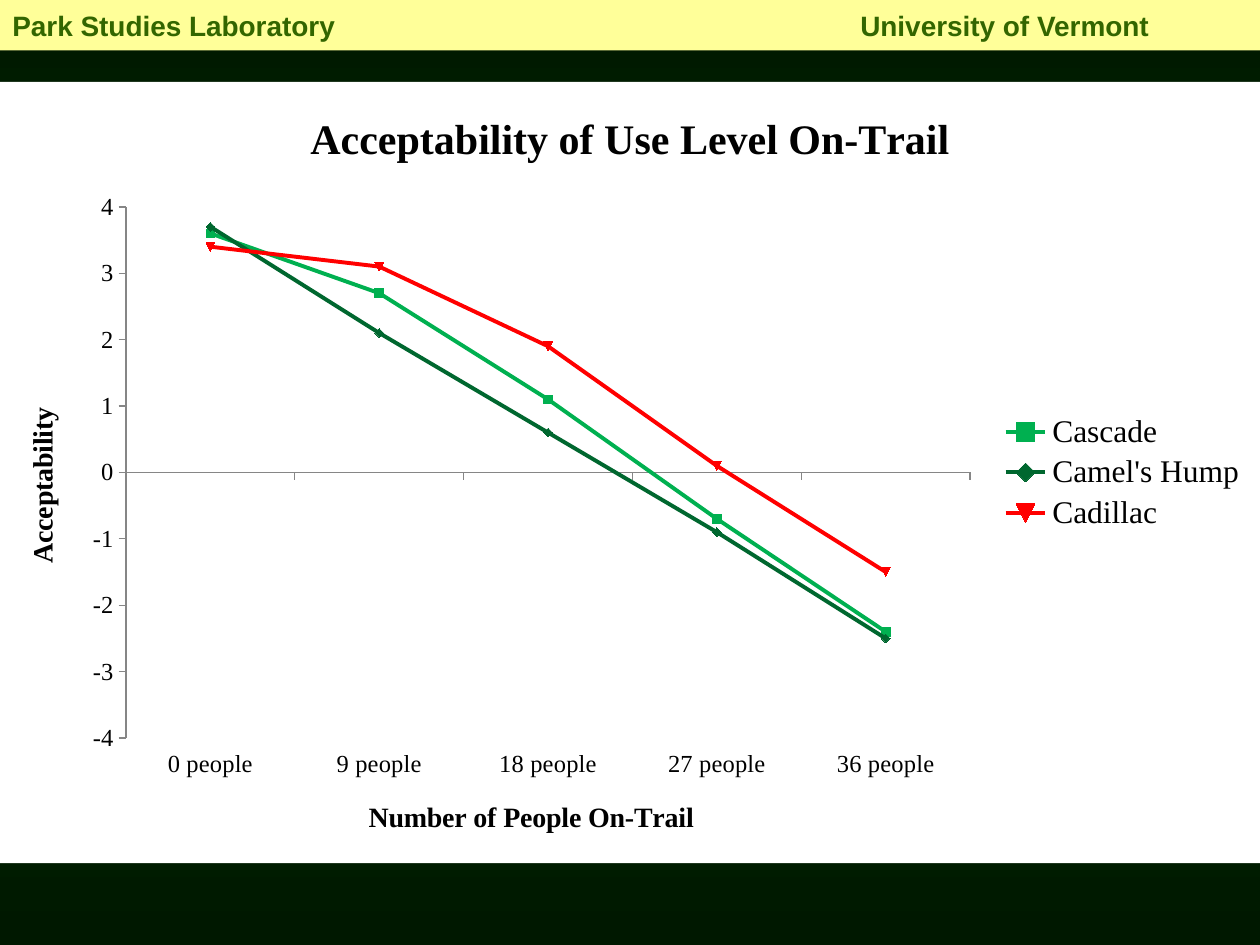
from lxml import etree
from pptx import Presentation
from pptx.chart.data import CategoryChartData
from pptx.dml.color import RGBColor
from pptx.enum.chart import (XL_CHART_TYPE, XL_LEGEND_POSITION, XL_MARKER_STYLE,
                             XL_TICK_LABEL_POSITION, XL_TICK_MARK)
from pptx.enum.shapes import MSO_SHAPE
from pptx.enum.text import MSO_ANCHOR, PP_ALIGN
from pptx.oxml import parse_xml
from pptx.oxml.ns import nsdecls, qn
from pptx.util import Inches, Pt

LINE_MARKERS = XL_CHART_TYPE.LINE_MARKERS
LEGEND_RIGHT = XL_LEGEND_POSITION.RIGHT
AUTOMATIC_MARKER = XL_MARKER_STYLE.AUTOMATIC
LABELS_LOW = XL_TICK_LABEL_POSITION.LOW
TICK_OUTSIDE = XL_TICK_MARK.OUTSIDE
TICK_NONE = XL_TICK_MARK.NONE
RECTANGLE = MSO_SHAPE.RECTANGLE
MIDDLE = MSO_ANCHOR.MIDDLE
LEFT = PP_ALIGN.LEFT

BLACK = RGBColor(0x00, 0x00, 0x00)
WHITE = RGBColor(0xFF, 0xFF, 0xFF)
AXIS_GRAY = RGBColor(0x86, 0x86, 0x86)
BANNER_YELLOW = RGBColor(0xFF, 0xFF, 0x99)
BANNER_GREEN = RGBColor(0x33, 0x66, 0x00)
EDGE_GREEN = RGBColor(0x00, 0x18, 0x00)
CENTER_GREEN = RGBColor(0x00, 0x33, 0x00)

BANNER = ("Park Studies Laboratory", "University of Vermont")
CHART_TITLE = "Acceptability of Use Level On-Trail"
CATEGORY_TITLE = "Number of People On-Trail"
VALUE_TITLE = "Acceptability"
CATEGORIES = [f"{people} people" for people in range(0, 37, 9)]
SERIES = [
    ("Cascade", (3.6, 2.7, 1.1, -0.7, -2.4), RGBColor(0x00, 0xB0, 0x50)),
    ("Camel's Hump", (3.7, 2.1, 0.6, -0.9, -2.5), RGBColor(0x00, 0x67, 0x2F)),
    ("Cadillac", (3.4, 3.1, 1.9, 0.1, -1.5), RGBColor(0xFF, 0x00, 0x00)),
]
PLOT_SHARES = {"x": 0.1, "y": 0.16, "w": 0.67, "h": 0.68}
WIDTH, HEIGHT = Inches(10), Inches(7.5)


def set_background(slide):
    fill = slide.background.fill
    fill.gradient()
    fill.gradient_angle = 90
    for stop in fill.gradient_stops:
        stop.color.rgb = EDGE_GREEN
    first_stop = slide.background._cSld.find(".//" + qn("a:gs"))
    first_stop.addnext(parse_xml(
        f'<a:gs {nsdecls("a")} pos="50000"><a:srgbClr val="{CENTER_GREEN}"/></a:gs>'))


def set_title(owner, text, size):
    frame = owner.text_frame
    frame.text = text
    font = frame.paragraphs[0].font
    font.name, font.size, font.bold = "Times New Roman", Pt(size), True
    font.color.rgb = BLACK


def format_axis(axis, title):
    set_title(axis.axis_title, title, 16)
    axis.has_major_gridlines = False
    axis.major_tick_mark = TICK_OUTSIDE
    axis.minor_tick_mark = TICK_NONE
    axis.tick_labels.font.size = Pt(14)
    axis.format.line.color.rgb = AXIS_GRAY
    axis.format.line.width = Pt(0.75)


def fill_area(parent, before):
    properties = parse_xml(
        f'<c:spPr {nsdecls("c", "a")}><a:solidFill><a:srgbClr val="{WHITE}"/>'
        '</a:solidFill><a:ln><a:noFill/></a:ln></c:spPr>')
    following = parent.find(qn(before)) if before else None
    if following is None:
        parent.append(properties)
    else:
        following.addprevious(properties)


def place_plot(plot_area):
    for layout in plot_area.findall(qn("c:layout")):
        plot_area.remove(layout)
    layout = etree.Element(qn("c:layout"))
    manual = etree.SubElement(layout, qn("c:manualLayout"))
    settings = {"layoutTarget": "inner", "xMode": "edge", "yMode": "edge", **PLOT_SHARES}
    for name, value in settings.items():
        etree.SubElement(manual, qn(f"c:{name}")).set("val", str(value))
    plot_area.insert(0, layout)


def add_acceptability_chart(slide):
    data = CategoryChartData()
    data.categories = CATEGORIES
    for name, values, _ in SERIES:
        data.add_series(name, values)
    chart = slide.shapes.add_chart(
        LINE_MARKERS, 0, Inches(0.65), WIDTH, Inches(6.2), data).chart
    chart.font.name, chart.font.size = "Times New Roman", Pt(10)
    chart.font.color.rgb = BLACK
    set_title(chart.chart_title, CHART_TITLE, 24)
    chart.chart_title.include_in_layout = False

    format_axis(chart.category_axis, CATEGORY_TITLE)
    chart.category_axis.tick_label_position = LABELS_LOW
    format_axis(chart.value_axis, VALUE_TITLE)
    chart.value_axis.minimum_scale, chart.value_axis.maximum_scale = -4, 4
    chart.value_axis.major_unit = 1

    chart.has_legend = True
    chart.legend.position = LEGEND_RIGHT
    chart.legend.include_in_layout = False
    chart.legend.font.size = Pt(18)

    plot = chart.plots[0]
    plot.vary_by_categories = False
    for series, (_, _, color) in zip(plot.series, SERIES):
        series.smooth = False
        series.format.line.color.rgb = color
        series.format.line.width = Pt(2.25)
        marker = series.marker
        marker.style, marker.size = AUTOMATIC_MARKER, 5
        marker.format.fill.solid()
        marker.format.fill.fore_color.rgb = color
        marker.format.line.color.rgb = color

    chart_space = chart._chartSpace
    plot_area = chart_space.find(".//" + qn("c:plotArea"))
    place_plot(plot_area)
    fill_area(plot_area, None)
    fill_area(chart_space, "c:txPr")


def add_banner(slide):
    banner = slide.shapes.add_shape(RECTANGLE, 0, 0, WIDTH, Inches(0.4))
    banner.shadow.inherit = False
    banner.fill.solid()
    banner.fill.fore_color.rgb = BANNER_YELLOW
    banner.line.fill.background()
    frame = banner.text_frame
    frame.vertical_anchor = MIDDLE
    paragraph = frame.paragraphs[0]
    paragraph.text = "\t".join(BANNER)
    paragraph.alignment = LEFT
    font = paragraph.font
    font.name, font.size, font.bold = "Arial", Pt(16), True
    font.color.rgb = BANNER_GREEN
    tabs = parse_xml(f'<a:tabLst {nsdecls("a")}><a:tab pos="{Inches(6.73)}" algn="l"/></a:tabLst>')
    paragraph._p.pPr.find(qn("a:defRPr")).addprevious(tabs)


def main():
    presentation = Presentation()
    presentation.slide_width, presentation.slide_height = WIDTH, HEIGHT
    slide = presentation.slides.add_slide(presentation.slide_layouts[6])
    set_background(slide)
    add_acceptability_chart(slide)
    add_banner(slide)
    presentation.save("out.pptx")


if __name__ == "__main__":
    main()
